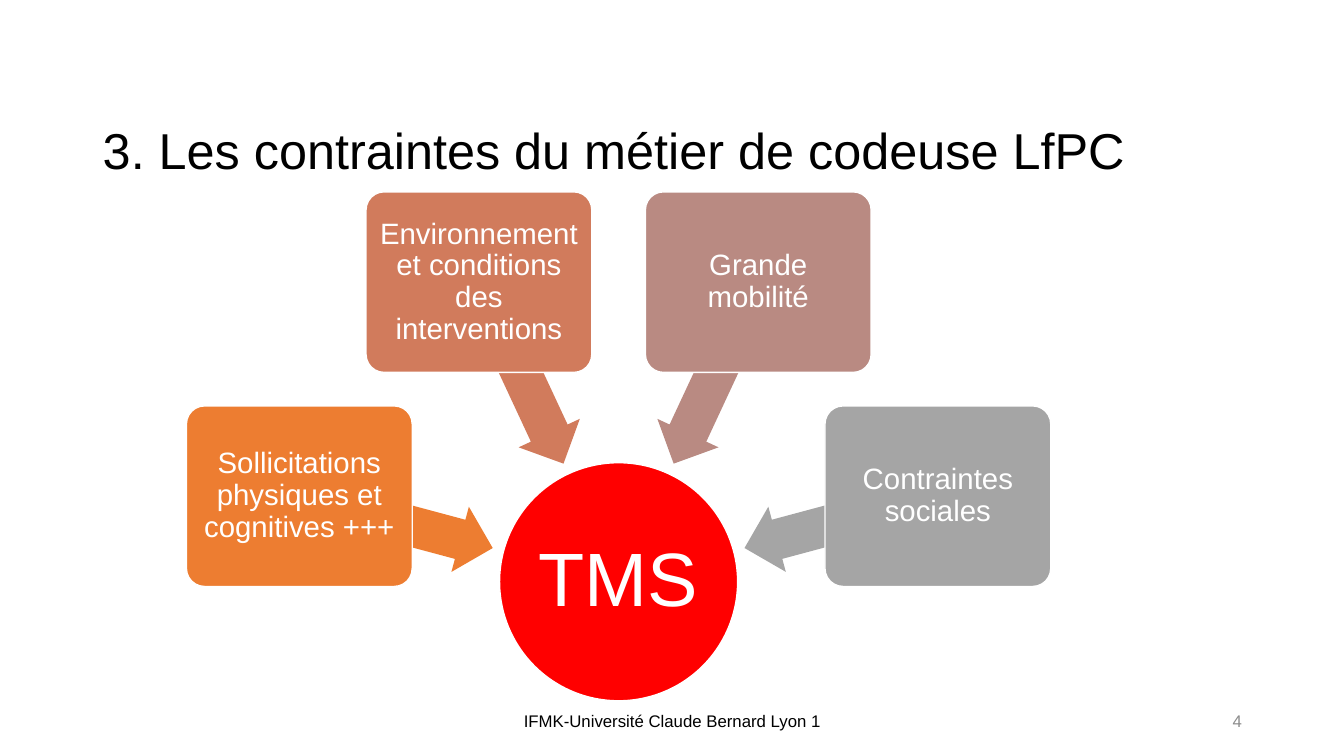
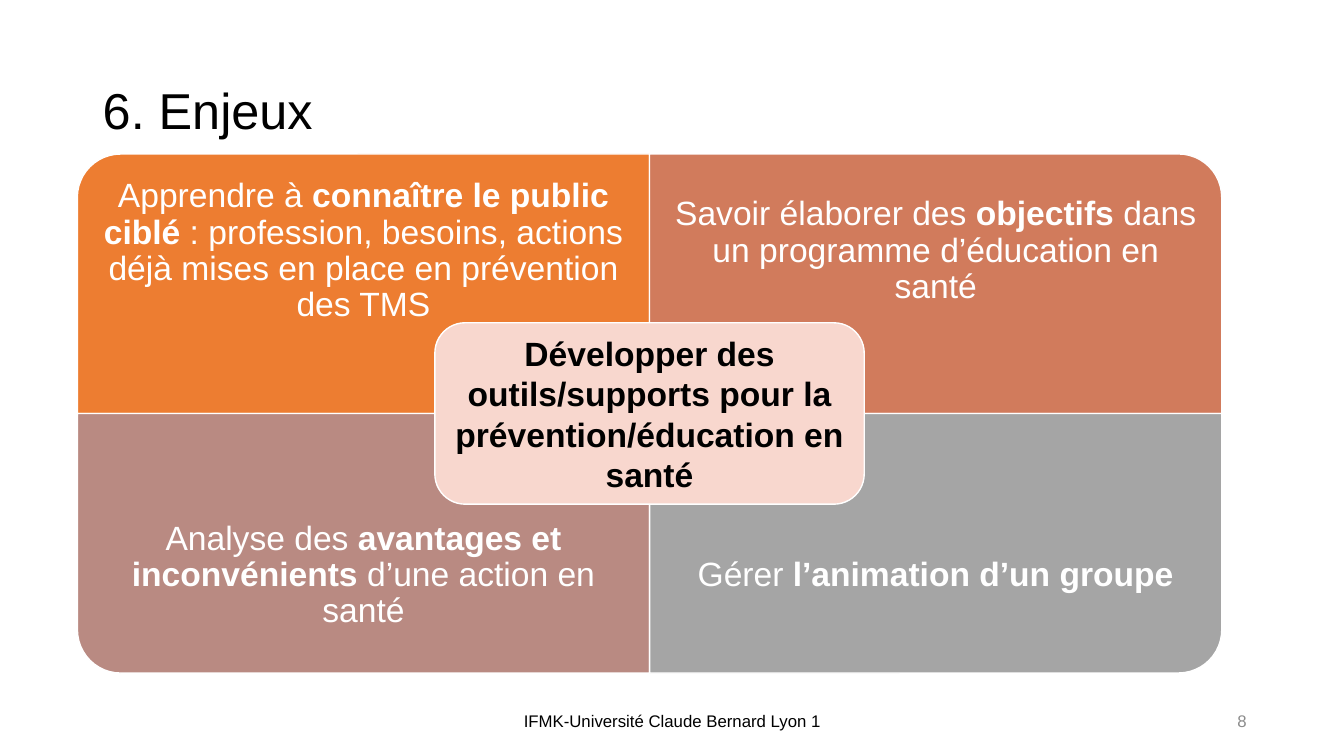
from dataclasses import dataclass
from math import cos, radians, sin

from pptx import Presentation
from pptx.dml.color import RGBColor
from pptx.enum.shapes import MSO_SHAPE
from pptx.enum.text import MSO_ANCHOR, PP_ALIGN
from pptx.shapes.autoshape import Shape
from pptx.slide import Slide
from pptx.text.text import TextFrame
from pptx.util import Cm, Pt

ELLIPSE = MSO_SHAPE.OVAL
ROUNDED = MSO_SHAPE.ROUNDED_RECTANGLE
ONE_ROUND_CORNER = MSO_SHAPE.ROUND_1_RECTANGLE
LEFT_ARROW = MSO_SHAPE.LEFT_ARROW
LEFT, CENTER, RIGHT = PP_ALIGN.LEFT, PP_ALIGN.CENTER, PP_ALIGN.RIGHT
MIDDLE = MSO_ANCHOR.MIDDLE

FONT = "Arial"
FOOTER = "IFMK-Université Claude Bernard Lyon 1"
COLORS = {
    "black": "000000",
    "white": "FFFFFF",
    "orange": "ED7D31",
    "terracotta": "D17B5C",
    "rosewood": "B98A82",
    "gray": "A5A5A5",
    "red": "FF0000",
    "blush": "F8D7CE",
    "number": "8C8C8C",
}


@dataclass(frozen=True)
class Area:
    """A rectangle in centimetres."""
    left: float
    top: float
    width: float
    height: float

    @classmethod
    def around(cls, x: float, y: float, width: float, height: float) -> "Area":
        return cls(x - width / 2, y - height / 2, width, height)

    def lengths(self) -> tuple[Cm, Cm, Cm, Cm]:
        return Cm(self.left), Cm(self.top), Cm(self.width), Cm(self.height)


@dataclass(frozen=True)
class Constraint:
    text: str
    color: str
    angle: int


@dataclass(frozen=True)
class Stake:
    text: str
    color: str
    column: int
    row: int
    rotation: int


CONSTRAINTS = (
    Constraint("Sollicitations physiques et cognitives +++", "orange", 195),
    Constraint("Environnement et conditions des interventions", "terracotta", 245),
    Constraint("Grande mobilité", "rosewood", 295),
    Constraint("Contraintes sociales", "gray", 345),
)

STAKES = (
    Stake("Apprendre à **connaître le public ciblé** : profession, besoins, "
          "actions déjà mises en place en prévention des TMS", "orange", 0, 0, 270),
    Stake("Savoir élaborer des **objectifs** dans un programme d’éducation en santé",
          "terracotta", 1, 0, 0),
    Stake("Analyse des **avantages et inconvénients** d’une action en santé",
          "rosewood", 0, 1, 180),
    Stake("Gérer **l’animation d’un groupe**", "gray", 1, 1, 90),
)


def rgb(name: str) -> RGBColor:
    return RGBColor.from_string(COLORS[name])


def write(frame: TextFrame, text: str, *, size: float, color: str = "white",
          align: PP_ALIGN = CENTER, spacing: float = 0.9,
          inset: float | None = None) -> None:
    """Fill a frame with one paragraph; **double stars** enclose bold text."""
    frame.word_wrap = True
    frame.vertical_anchor = MIDDLE
    if inset is not None:
        frame.margin_left = frame.margin_right = Cm(inset)
        frame.margin_top = frame.margin_bottom = Cm(inset)
    para = frame.paragraphs[0]
    para.alignment = align
    para.line_spacing = spacing
    for index, part in enumerate(text.split("**")):
        if part:
            span = para.add_run()
            span.text = part
            span.font.name = FONT
            span.font.size = Pt(size)
            span.font.bold = index % 2 == 1
            span.font.color.rgb = rgb(color)


def add_text(page: Slide, area: Area, text: str, **text_format) -> None:
    write(page.shapes.add_textbox(*area.lengths()).text_frame, text, **text_format)


def add_figure(page: Slide, kind: MSO_SHAPE, area: Area, color: str, *,
               outlined: bool = True, rotation: float = 0,
               adjustments: tuple[float, ...] = ()) -> Shape:
    figure = page.shapes.add_shape(kind, *area.lengths())
    figure.shadow.inherit = False
    figure.rotation = rotation
    for index, value in enumerate(adjustments):
        figure.adjustments[index] = value
    figure.fill.solid()
    figure.fill.fore_color.rgb = rgb(color)
    if outlined:
        figure.line.color.rgb = rgb("white")
        figure.line.width = Pt(1)
    else:
        figure.line.fill.background()
    return figure


def add_page(deck: Presentation, title: str, title_top: float,
             number: int, number_right: float) -> Slide:
    page = deck.slides.add_slide(deck.slide_layouts[6])
    add_text(page, Area(2.34, title_top, 29.21, 3.68), title,
             size=36, color="black", align=LEFT)
    add_text(page, Area(11.23, 17.65, 11.43, 1.02), FOOTER,
             size=12, color="black", spacing=1)
    add_text(page, Area(number_right - 7.62, 17.65, 7.62, 1.02), str(number),
             size=12, color="number", align=RIGHT, spacing=1)
    return page


def draw_constraints(page: Slide) -> None:
    """Draw the hub with the constraints on an arc, pointing at it."""
    hub_x, hub_y, hub_size = 15.59, 14.66, 6
    arrow_radius, box_radius = 5.8, 8.33
    hub = add_figure(page, ELLIPSE, Area.around(hub_x, hub_y, hub_size, hub_size), "red")
    write(hub.text_frame, "TMS", size=54, inset=0.1)
    for item in CONSTRAINTS:
        across, down = cos(radians(item.angle)), sin(radians(item.angle))
        arrow = Area.around(hub_x + arrow_radius * across,
                            hub_y + arrow_radius * down, 5.03, 1.7)
        add_figure(page, LEFT_ARROW, arrow, item.color, outlined=False,
                   rotation=item.angle, adjustments=(0.6, 0.5))
        area = Area.around(hub_x + box_radius * across,
                           hub_y + box_radius * down, 5.69, 4.55)
        box = add_figure(page, ROUNDED, area, item.color, adjustments=(0.1,))
        write(box.text_frame, item.text, size=21, inset=0.1)


def draw_stakes(page: Slide) -> None:
    """Draw four quadrants, their texts kept clear of the central box."""
    left, top, width, height = 1.95, 3.88, 14.42, 6.54
    text_height = height * 0.75
    for stake in STAKES:
        x = left + stake.column * width
        y = top + stake.row * height
        sides = (height, width) if stake.rotation % 180 else (width, height)
        quadrant = Area.around(x + width / 2, y + height / 2, *sides)
        add_figure(page, ONE_ROUND_CORNER, quadrant, stake.color,
                   rotation=stake.rotation)
        text_top = y + stake.row * (height - text_height)
        add_text(page, Area(x, text_top, width, text_height), stake.text,
                 size=24, inset=0.48)
    center = add_figure(page, ROUNDED,
                        Area.around(left + width, top + height, 10.82, 4.57), "blush")
    write(center.text_frame,
          "**Développer des outils/supports pour la prévention/éducation en santé**",
          size=24, color="black", spacing=1, inset=0.25)


def main() -> None:
    deck = Presentation()
    deck.slide_width, deck.slide_height = Cm(33.87), Cm(19.05)
    draw_constraints(add_page(
        deck, "3. Les contraintes du métier de codeuse LfPC", 2.03, 4, 31.55))
    draw_stakes(add_page(deck, "6. Enjeux", 1.02, 8, 31.67))
    deck.save("out.pptx")


if __name__ == "__main__":
    main()
